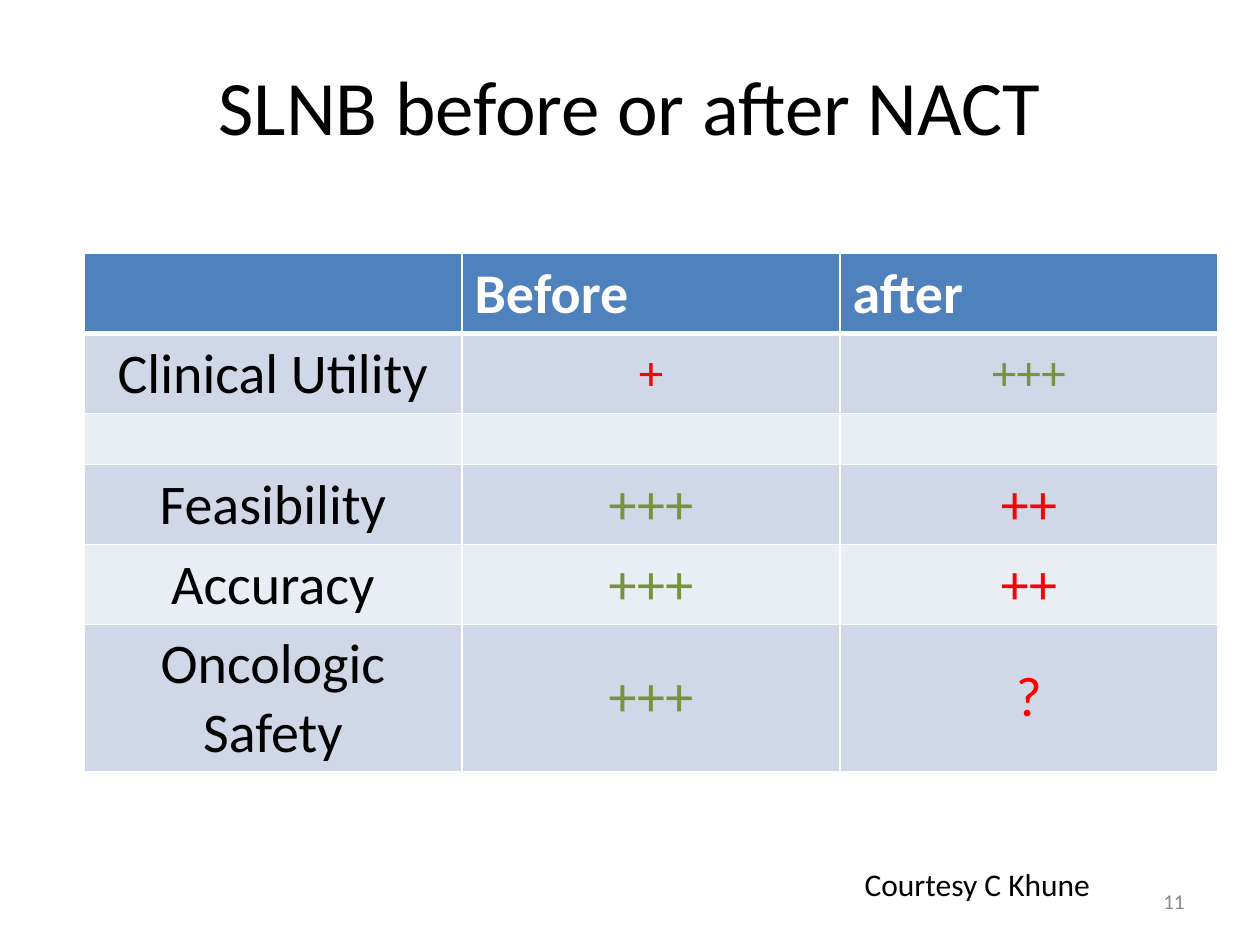
"""Build a slide comparing SLNB before and after NACT in a table."""
from lxml.etree import SubElement
from pptx import Presentation
from pptx.dml.color import RGBColor
from pptx.enum.text import MSO_ANCHOR, PP_ALIGN
from pptx.oxml.ns import qn
from pptx.util import Pt

COLORS = {
    "black": "000000", "white": "FFFFFF", "gray": "898989",
    "header": "4F81BD", "odd": "D0D8E8", "even": "E9EDF4",
    "good": "77933C", "poor": "FF0000",
}


def write(frame, text, size=32, color="black", bold=False,
          align=PP_ALIGN.CENTER, anchor=MSO_ANCHOR.MIDDLE):
    frame.word_wrap = True
    frame.vertical_anchor = anchor
    paragraph = frame.paragraphs[0]
    paragraph.alignment = align
    run = paragraph.add_run()
    run.text = text
    run.font.name = "Calibri"
    run.font.size = Pt(size)
    run.font.bold = bold
    run.font.color.rgb = RGBColor.from_string(COLORS[color])


def add_border(cell, side, width):
    line = SubElement(cell._tc.get_or_add_tcPr(), qn(f"a:ln{side}"), w=str(Pt(width)))
    fill = SubElement(line, qn("a:solidFill"))
    SubElement(fill, qn("a:srgbClr"), val=COLORS["white"])


presentation = Presentation()
presentation.slide_width, presentation.slide_height = Pt(720), Pt(540)
slide = presentation.slides.add_slide(presentation.slide_layouts[6])

title = slide.shapes.add_textbox(Pt(36), Pt(15), Pt(648), Pt(90))
write(title.text_frame, "SLNB before or after NACT", size=44)

page_number = slide.shapes.add_textbox(Pt(516), Pt(500.5), Pt(168), Pt(28.75))
write(page_number.text_frame, "11", size=12, color="gray", align=PP_ALIGN.RIGHT)

ratings = [
    ("", "Before", "after"),
    ("Clinical Utility", "+", "+++"),
    ("", "", ""),
    ("Feasibility", "+++", "++"),
    ("Accuracy", "+++", "++"),
    ("Oncologic Safety", "+++", "?"),
]
row_heights = [45.5, 45.5, 29.2, 45.5, 45.5, 84]
comparison = slide.shapes.add_table(
    len(ratings), 3, Pt(48), Pt(145), Pt(648), Pt(sum(row_heights))).table
for column in comparison.columns:
    column.width = Pt(216)

for row, (labels, height) in enumerate(zip(ratings, row_heights)):
    comparison.rows[row].height = Pt(height)
    band = "header" if row == 0 else "odd" if row % 2 else "even"
    for column, label in enumerate(labels):
        cell = comparison.cell(row, column)
        for side in "LRTB":
            under_header = (row, side) in [(0, "B"), (1, "T")]
            add_border(cell, side, 3 if under_header else 1)
        cell.fill.solid()
        cell.fill.fore_color.rgb = RGBColor.from_string(COLORS[band])
        if not label:
            continue
        if row == 0:
            write(cell.text_frame, label, color="white", bold=True,
                  align=PP_ALIGN.LEFT, anchor=MSO_ANCHOR.TOP)
        elif column == 0:
            write(cell.text_frame, label)
        else:
            write(cell.text_frame, label, size=28 if row == 1 else 32,
                  color="good" if label == "+++" else "poor")
        if row:
            cell.vertical_anchor = MSO_ANCHOR.MIDDLE

credit = slide.shapes.add_textbox(Pt(360), Pt(491), Pt(270), Pt(29))
write(credit.text_frame, "Courtesy C Khune", size=18,
      align=PP_ALIGN.RIGHT, anchor=MSO_ANCHOR.TOP)

presentation.save("out.pptx")
